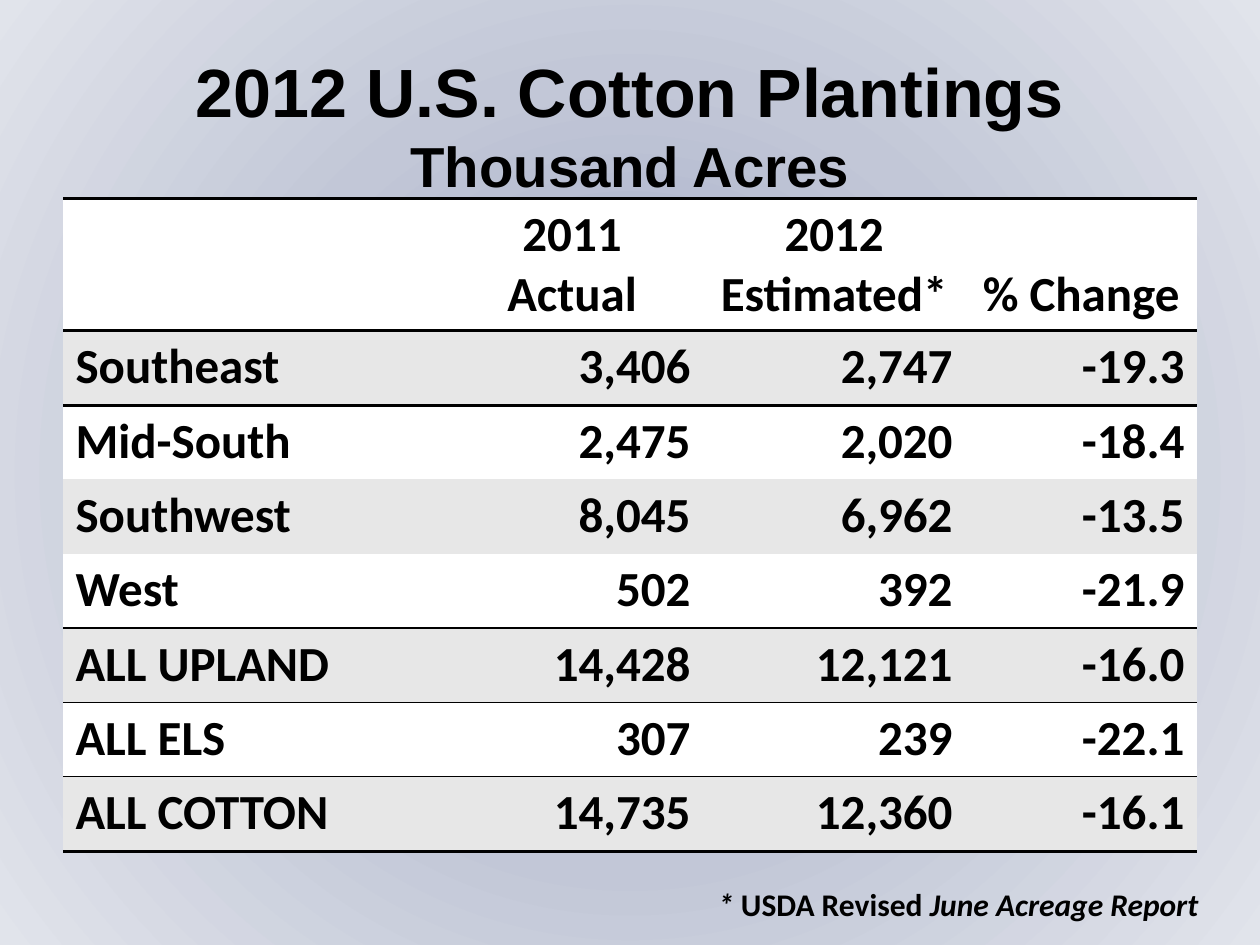
"""Builds the 2012 U.S. cotton plantings slide with its acreage table."""
import pptx
import pptx.util
import pptx.dml.color
import pptx.enum.text
import pptx.oxml

COLORS = {"ink": "000000", "plain": "FFFFFF", "band": "E7E7E7",
          "core": "98A3C1", "middle": "C2C7D7", "edge": "E1E4EB"}
NAMESPACE = 'xmlns:a="http://schemas.openxmlformats.org/drawingml/2006/main"'
NO_STYLE = "{2D5ABB26-0587-4C30-8999-92F81FD0307C}"
ALIGN = pptx.enum.text.PP_ALIGN
ANCHOR = pptx.enum.text.MSO_ANCHOR

TITLE = [("2012 U.S. Cotton Plantings", 39), ("Thousand Acres", 32.2)]
ROWS = [
    ("", "2011 Actual", "2012 Estimated*", "% Change"),
    ("Southeast", "3,406", "2,747", "-19.3"),
    ("Mid-South", "2,475", "2,020", "-18.4"),
    ("Southwest", "8,045", "6,962", "-13.5"),
    ("West", "502", "392", "-21.9"),
    ("ALL UPLAND", "14,428", "12,121", "-16.0"),
    ("ALL ELS", "307", "239", "-22.1"),
    ("ALL COTTON", "14,735", "12,360", "-16.1"),
]
COLUMN_WIDTHS = [3, 2.08, 2.08, 1.84]
HEADER_HEIGHT, ROW_HEIGHT = 1.04, 0.59
RULES = {0: 2, 1: 2, 5: 1, 7: 1, 8: 2}
FOOTNOTE = [("* ", True), ("USDA Revised ", False), ("June Acreage Report", True)]


class SlideBuilder:
    """Holds the style and the current slide."""

    def __init__(self, deck):
        self.deck = deck
        self.page = deck.slides.add_slide(deck.slide_layouts[5])

    def area(self, left, top, width, height):
        """Turns shares of the slide into lengths."""
        wide, high = self.deck.slide_width, self.deck.slide_height
        return [round(value) for value in
                (left * wide, top * high, width * wide, height * high)]

    def apply(self, target, values):
        """Sets every attribute named in a dict."""
        for name, value in values.items():
            setattr(target, name, value)

    def add_span(self, para, text, size, font="Calibri", italic=False):
        """Adds one bold span to a paragraph."""
        span = para.add_run()
        span.text = text
        self.apply(span.font, {"name": font, "size": pptx.util.Pt(size),
                               "bold": True, "italic": italic})
        span.font.color.rgb = pptx.dml.color.RGBColor.from_string(COLORS["ink"])

    def background(self, stops):
        """Fills the slide with a circular gradient."""
        fill = self.page.background.fill
        fill.gradient()
        gradient = self.page.element.xpath("./p:cSld/p:bg/p:bgPr/a:gradFill")[0]
        marks = "".join(f'<a:gs pos="{share * 1000}"><a:srgbClr val="{COLORS[name]}"/></a:gs>'
                        for share, name in stops)
        gradient.getparent().replace(gradient, pptx.oxml.parse_xml(
            f'<a:gradFill {NAMESPACE} rotWithShape="1"><a:gsLst>{marks}</a:gsLst>'
            '<a:path path="circle"><a:fillToRect l="50000" t="50000" r="50000" b="50000"/>'
            '</a:path></a:gradFill>'))

    def title(self, lines, area):
        """Places and formats the title placeholder."""
        box = self.page.shapes.title
        self.apply(box, dict(zip(("left", "top", "width", "height"), self.area(*area))))
        frame = box.text_frame
        self.apply(frame, {"vertical_anchor": ANCHOR.BOTTOM, "margin_bottom": 0,
                           "word_wrap": True,
                           "auto_size": pptx.enum.text.MSO_AUTO_SIZE.NONE})
        for index, (text, size) in enumerate(lines):
            para = frame.add_paragraph() if index else frame.paragraphs[0]
            self.apply(para, {"alignment": ALIGN.CENTER, "line_spacing": 1.0,
                              "space_before": pptx.util.Pt(0)})
            self.add_span(para, text, size, "Arial")

    def rule(self, cell, side, width):
        """Draws one horizontal cell border."""
        cell._tc.get_or_add_tcPr().insert(0, pptx.oxml.parse_xml(
            f'<a:ln{side} {NAMESPACE} w="{pptx.util.Pt(width)}"><a:solidFill>'
            f'<a:srgbClr val="{COLORS["ink"]}"/></a:solidFill></a:ln{side}>'))

    def table(self, rows, area):
        """Adds the banded table with its rules."""
        frame = self.page.shapes.add_table(len(rows), len(COLUMN_WIDTHS), *self.area(*area))
        frame.element.xpath(".//a:tableStyleId")[0].text = NO_STYLE
        table = frame.table
        self.apply(table, {"first_row": False, "horz_banding": False})
        for column, width in zip(table.columns, COLUMN_WIDTHS):
            column.width = pptx.util.Inches(width)
        for row, texts in enumerate(rows):
            table.rows[row].height = pptx.util.Inches(ROW_HEIGHT if row else HEADER_HEIGHT)
            for column, text in enumerate(texts):
                self.cell(table.cell(row, column), row, column, text)

    def cell(self, cell, row, column, text):
        """Fills and formats one table cell."""
        cell.fill.solid()
        shade = COLORS["band" if row % 2 else "plain"]
        cell.fill.fore_color.rgb = pptx.dml.color.RGBColor.from_string(shade)
        cell.vertical_anchor = ANCHOR.TOP if row else ANCHOR.BOTTOM
        para = cell.text_frame.paragraphs[0]
        body_align = ALIGN.RIGHT if column else ALIGN.LEFT
        para.alignment = body_align if row else ALIGN.CENTER
        if text:
            self.add_span(para, text, 28)
        for side, edge in (("B", row + 1), ("T", row)):
            if edge in RULES:
                self.rule(cell, side, RULES[edge])

    def footnote(self, spans, area):
        """Adds the source line."""
        frame = self.page.shapes.add_textbox(*self.area(*area)).text_frame
        self.apply(frame, {"word_wrap": True, "margin_left": pptx.util.Inches(0.5)})
        for text, italic in spans:
            self.add_span(frame.paragraphs[0], text, 18, italic=italic)


def main():
    """Builds and saves the deck."""
    deck = pptx.Presentation()
    deck.slide_width, deck.slide_height = pptx.util.Inches(10), pptx.util.Inches(7.5)
    builder = SlideBuilder(deck)
    builder.background([(0, "core"), (50, "middle"), (100, "edge")])
    builder.title(TITLE, (0.05, 0.04, 0.9, 0.17))
    builder.table(ROWS, (0.05, 0.21, 0.9, 0.69))
    builder.footnote(FOOTNOTE, (0.52, 0.93, 0.48, 0.05))
    deck.save("out.pptx")


if __name__ == "__main__":
    main()
